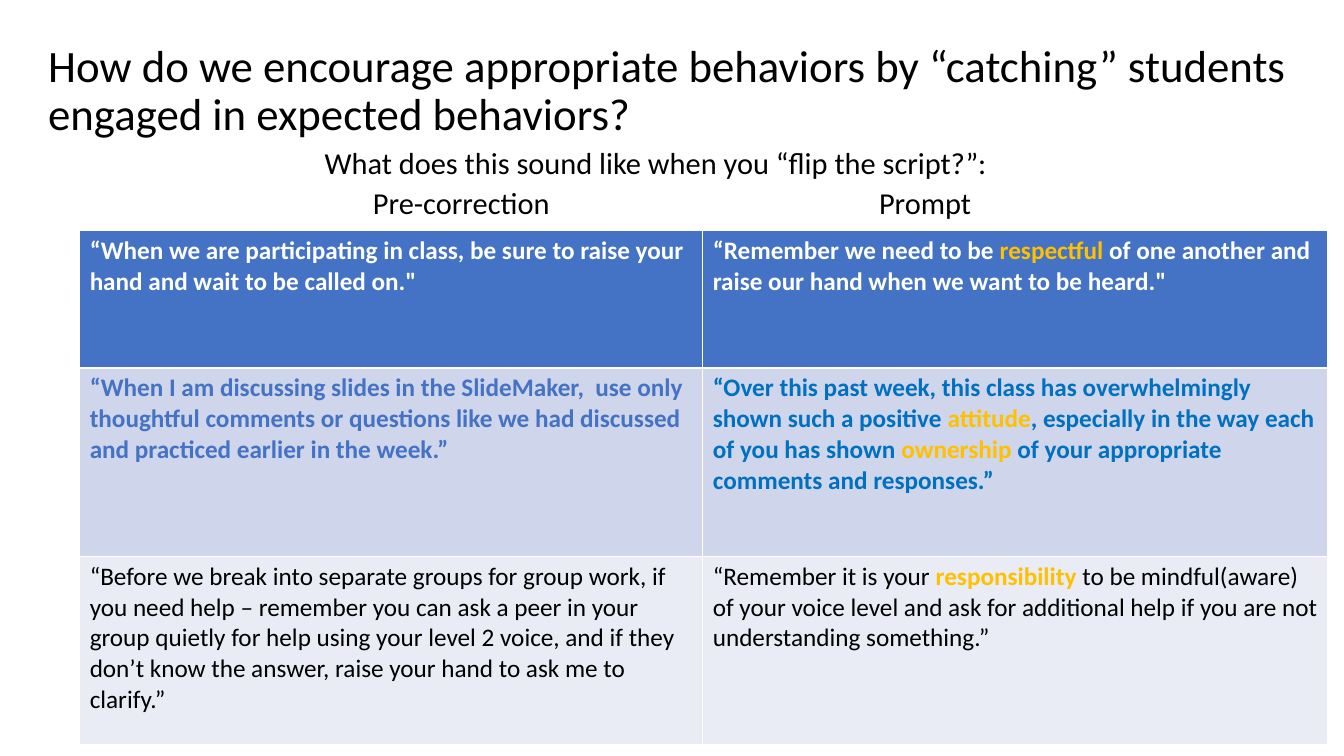
from lxml import etree
from pptx import Presentation
from pptx.dml.color import RGBColor
from pptx.enum.text import MSO_ANCHOR
from pptx.oxml.ns import qn
from pptx.util import Inches, Pt

BLACK = RGBColor(0x00, 0x00, 0x00)
WHITE = RGBColor(0xFF, 0xFF, 0xFF)
BLUE = RGBColor(0x44, 0x72, 0xC4)
BRIGHT_BLUE = RGBColor(0x00, 0x70, 0xC0)
GOLD = RGBColor(0xFF, 0xC0, 0x00)
BAND_DARK = RGBColor(0xCF, 0xD5, 0xEA)
BAND_LIGHT = RGBColor(0xE9, 0xEB, 0xF5)

COLUMN_WIDTHS = (6.18, 6.2)
# Height, fill, bold, then the text colour and the parts of each cell;
# every second part of a cell is a highlighted school value.
ROWS = [
    (1.36, BLUE, True, [
        (WHITE, ["“When we are participating in class, be sure to raise your hand "
                 "and wait to be called on.\""]),
        (WHITE, ["“Remember we need to be ", "respectful",
                 " of one another and raise our hand when we want to be heard.\""]),
    ]),
    (1.87, BAND_DARK, True, [
        (BLUE, ["“When I am discussing slides in the SlideMaker,  use only thoughtful "
                "comments or questions like we had discussed and practiced earlier "
                "in the week.”"]),
        (BRIGHT_BLUE, ["“Over this past week, this class has overwhelmingly shown such "
                       "a positive ", "attitude",
                       ", especially in the way each of you has shown ", "ownership",
                       " of your appropriate comments and responses.”"]),
    ]),
    (1.87, BAND_LIGHT, False, [
        (BLACK, ["“Before we break into separate groups for group work, if you need "
                 "help – remember you can ask a peer in your group quietly for help "
                 "using your level 2 voice, and if they don’t know the answer, raise "
                 "your hand to ask me to clarify.”"]),
        (BLACK, ["“Remember it is your ", "responsibility",
                 " to be mindful(aware) of your voice level and ask for additional "
                 "help if you are not understanding something.”"]),
    ]),
]


def add_run(p, text, size=18, color=BLACK, bold=False):
    r = p.add_run()
    r.text = text
    r.font.name = "Calibri"
    r.font.size = Pt(size)
    r.font.bold = bold
    r.font.color.rgb = color


def add_textbox(slide, box, lines, size, spacing, before=0, anchor=MSO_ANCHOR.TOP):
    tf = slide.shapes.add_textbox(*map(Inches, box)).text_frame
    tf.word_wrap = True
    tf.vertical_anchor = anchor
    for i, line in enumerate(lines):
        p = tf.add_paragraph() if i else tf.paragraphs[0]
        p.line_spacing = spacing
        p.space_before = Pt(before)
        add_run(p, line, size=size)
    return tf


def set_tab(p, indent, tab):
    """Indent a paragraph and give it one left tab stop, both in inches."""
    pPr = p._p.get_or_add_pPr()
    pPr.set("marL", str(Inches(indent)))
    tabs = etree.SubElement(pPr, qn("a:tabLst"))
    etree.SubElement(tabs, qn("a:tab"), pos=str(Inches(tab)), algn="l")


def add_script_table(slide, left, top):
    width = sum(COLUMN_WIDTHS)
    height = sum(row[0] for row in ROWS)
    table = slide.shapes.add_table(
        len(ROWS), len(COLUMN_WIDTHS),
        *map(Inches, (left, top, width, height))).table
    for column, column_width in zip(table.columns, COLUMN_WIDTHS):
        column.width = Inches(column_width)
    for row, (row_height, fill, bold, cells) in zip(table.rows, ROWS):
        row.height = Inches(row_height)
        for cell, (color, parts) in zip(row.cells, cells):
            cell.fill.solid()
            cell.fill.fore_color.rgb = fill
            p = cell.text_frame.paragraphs[0]
            for i, part in enumerate(parts):
                value = i % 2 == 1
                add_run(p, part, color=GOLD if value else color, bold=bold or value)


def main():
    prs = Presentation()
    prs.slide_width, prs.slide_height = Inches(13.33), Inches(7.5)
    slide = prs.slides.add_slide(prs.slide_layouts[6])
    add_textbox(slide, (0.38, 0.17, 12.57, 1.48),
                ["How do we encourage appropriate behaviors by “catching” students "
                 "engaged in expected behaviors?"],
                size=32, spacing=0.9, anchor=MSO_ANCHOR.MIDDLE)
    tf = add_textbox(slide, (3.12, 1.48, 7.55, 0.8),
                     ["What does this sound like when you “flip the script?”:",
                      "Pre-correction\tPrompt"],
                     size=21.7, spacing=0.7, before=10)
    set_tab(tf.paragraphs[1], indent=0.48, tab=5.02)
    add_script_table(slide, 0.79, 2.29)
    prs.save("out.pptx")


if __name__ == "__main__":
    main()
